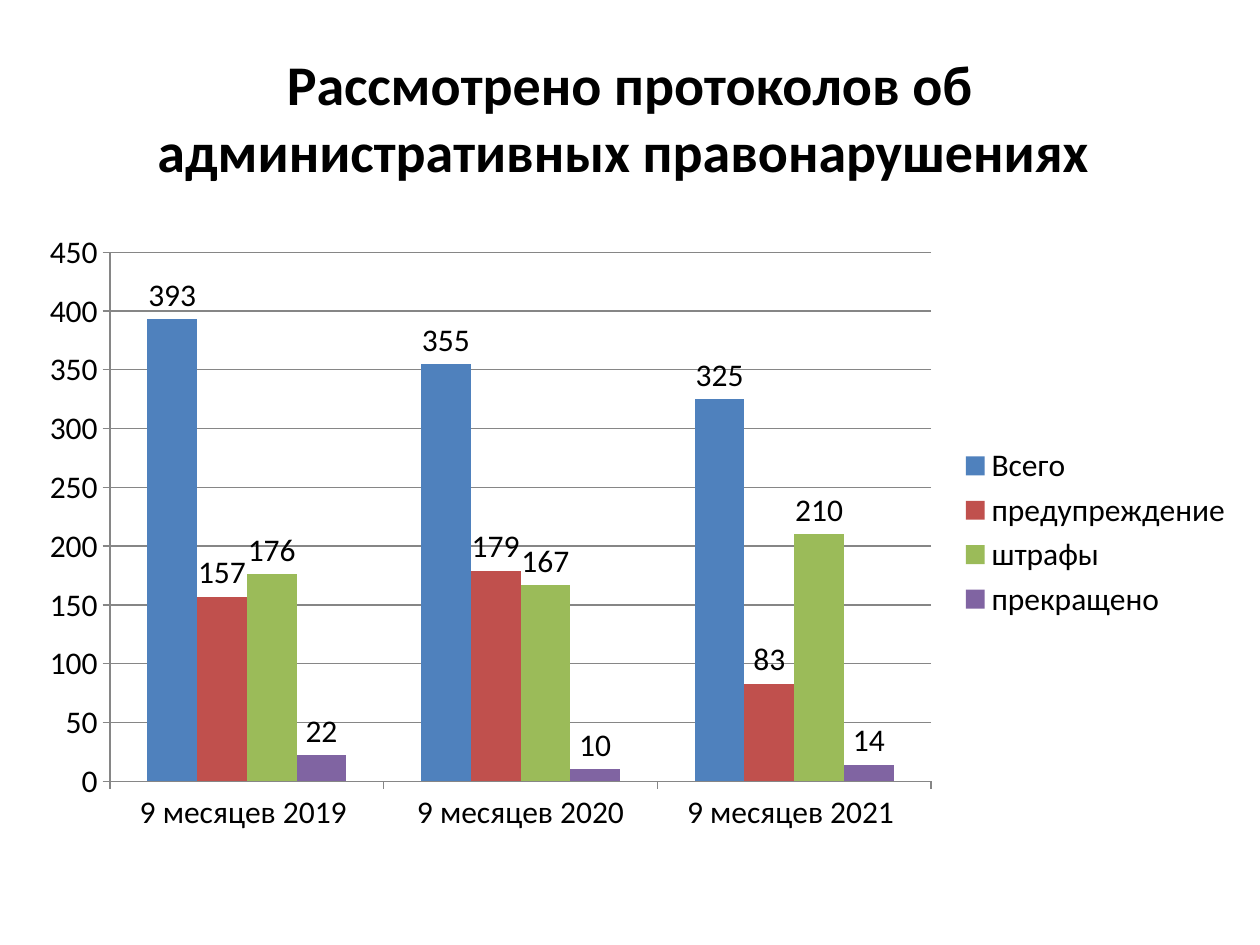
from pptx import Presentation
from pptx.chart.data import CategoryChartData
from pptx.dml.color import RGBColor
from pptx.enum import chart as ch, text
from pptx.util import Cm, Pt

FONT = "Calibri"
BLACK = RGBColor(0x00, 0x00, 0x00)
GRAY = RGBColor(0x86, 0x86, 0x86)
BLUE = RGBColor(0x4F, 0x81, 0xBD)
RED = RGBColor(0xC0, 0x50, 0x4D)
GREEN = RGBColor(0x9B, 0xBB, 0x59)
PURPLE = RGBColor(0x80, 0x64, 0xA2)

TITLE = "Рассмотрено протоколов об административных правонарушениях "
PERIODS = ["9 месяцев 2019 ", "9 месяцев 2020", "9 месяцев 2021 "]
SERIES = [
    ("Всего", (393, 355, 325), BLUE),
    ("предупреждение", (157, 179, 83), RED),
    ("штрафы", (176, 167, 210), GREEN),
    ("прекращено", (22, 10, 14), PURPLE),
]


def set_attrs(obj, **values):
    for name, value in values.items():
        setattr(obj, name, value)


def set_font(font, size, bold=False):
    set_attrs(font, name=FONT, size=Pt(size), bold=bold)
    font.color.rgb = BLACK


def set_line(fmt):
    fmt.line.color.rgb = GRAY
    fmt.line.width = Pt(0.75)


def add_title(s):
    sp = s.shapes.title
    set_attrs(sp, left=Cm(1.27), top=Cm(0.76), width=Cm(22.86), height=Cm(3.18))
    tf = sp.text_frame
    set_attrs(tf, word_wrap=True, vertical_anchor=text.MSO_ANCHOR.MIDDLE)
    p = tf.paragraphs[0]
    p.alignment = text.PP_ALIGN.CENTER
    r = p.add_run()
    r.text = TITLE
    set_font(r.font, 32, bold=True)


def format_axes(chart):
    for axis in (chart.category_axis, chart.value_axis):
        set_attrs(axis, major_tick_mark=ch.XL_TICK_MARK.OUTSIDE,
                  minor_tick_mark=ch.XL_TICK_MARK.NONE)
        set_line(axis.format)
    axis = chart.value_axis
    set_attrs(axis, minimum_scale=0, maximum_scale=450, major_unit=50,
              has_major_gridlines=True)
    set_line(axis.major_gridlines.format)


def add_protocol_chart(s):
    data = CategoryChartData()
    data.categories = PERIODS
    for name, values, _ in SERIES:
        data.add_series(name, values)
    chart = s.shapes.add_chart(ch.XL_CHART_TYPE.COLUMN_CLUSTERED, Cm(0.51), Cm(4.45),
                               Cm(24.61), Cm(12.57), data).chart
    set_attrs(chart, has_title=False, has_legend=True)
    set_font(chart.font, 18)
    set_attrs(chart.legend, position=ch.XL_LEGEND_POSITION.RIGHT,
              include_in_layout=False)
    format_axes(chart)

    plot = chart.plots[0]
    set_attrs(plot, gap_width=150, overlap=0, vary_by_categories=False,
              has_data_labels=True)
    set_attrs(plot.data_labels, show_value=True,
              position=ch.XL_LABEL_POSITION.OUTSIDE_END)
    for series, (_, _, color) in zip(plot.series, SERIES):
        series.invert_if_negative = False
        series.format.fill.solid()
        series.format.fill.fore_color.rgb = color


def main():
    prs = Presentation()
    set_attrs(prs, slide_width=Cm(25.4), slide_height=Cm(19.05))
    s = prs.slides.add_slide(prs.slide_layouts[5])
    add_title(s)
    add_protocol_chart(s)
    prs.save("out.pptx")


if __name__ == "__main__":
    main()
